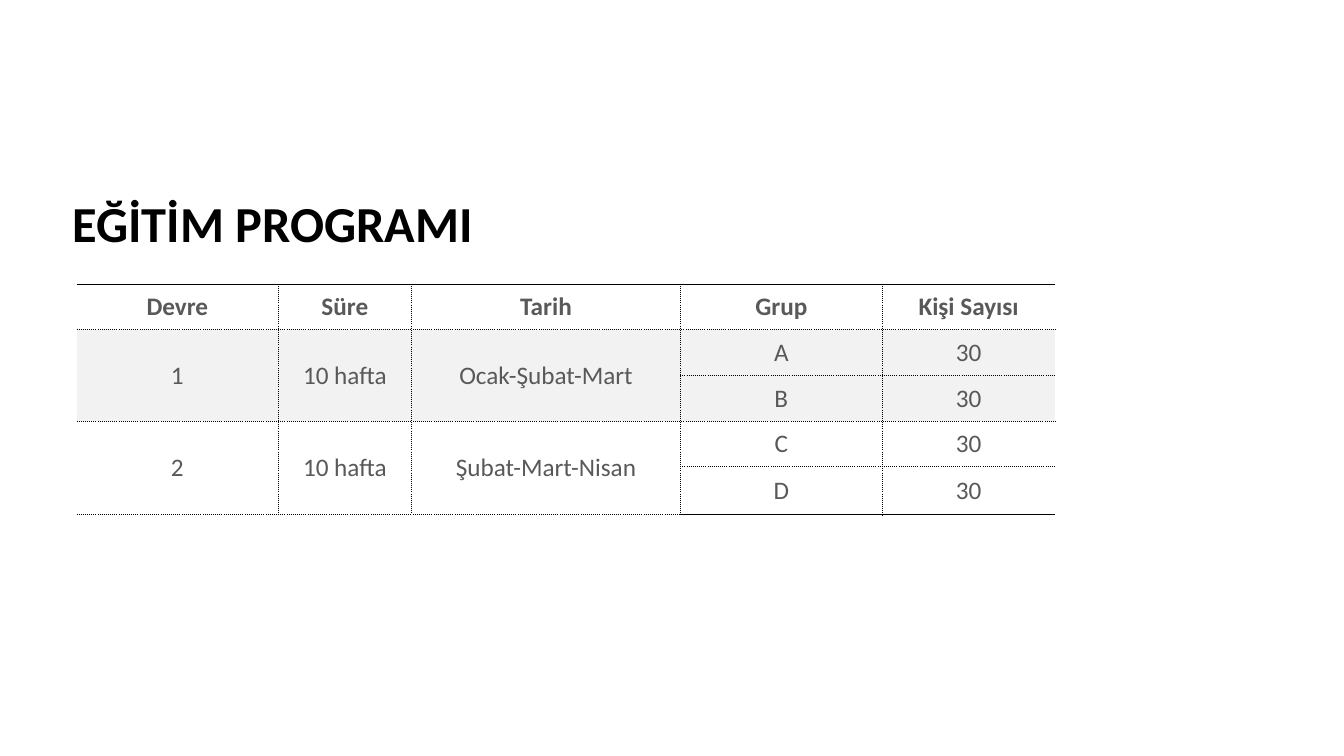
from dataclasses import dataclass

from lxml.etree import SubElement
from pptx import Presentation
from pptx.dml.color import RGBColor
from pptx.enum.text import MSO_ANCHOR, PP_ALIGN
from pptx.oxml.ns import qn
from pptx.slide import Slide
from pptx.table import Table, _Cell
from pptx.text.text import _Paragraph
from pptx.util import Cm, Pt


@dataclass(frozen=True)
class Theme:
    font: str = "Calibri"
    title_color: str = "000000"
    text_color: str = "595959"
    line_color: str = "000000"
    band_fill: str = "F2F2F2"
    title_size: int = 36
    table_size: int = 18


@dataclass(frozen=True)
class Border:
    width: float
    dash: str


@dataclass(frozen=True)
class Term:
    name: str
    duration: str
    months: str
    groups: tuple[tuple[str, str], ...]
    shaded: bool


THEME = Theme()
RULE = Border(1, "solid")
DOTTED = Border(0.5, "dot")

HEADERS = ("Devre", "Süre", "Tarih", "Grup", "Kişi Sayısı")
TERMS = (
    Term("1", "10 hafta", "Ocak-Şubat-Mart", (("A", "30"), ("B", "30")), True),
    Term("2", "10 hafta", "Şubat-Mart-Nisan", (("C", "30"), ("D", "30")), False),
)
COL_WIDTHS = (5.08, 3.36, 6.78, 5.08, 4.36)
ROW_HEIGHTS = (1.15, 1.15, 1.15, 1.15, 1.2)


def add_run(p: _Paragraph, text: str, size: int, color: str, bold: bool) -> None:
    r = p.add_run()
    r.text = text
    r.font.name = THEME.font
    r.font.size = Pt(size)
    r.font.bold = bold
    r.font.color.rgb = RGBColor.from_string(color)


def add_title(s: Slide, text: str) -> None:
    tf = s.shapes.add_textbox(Cm(1.58), Cm(4.65), Cm(31.8), Cm(2.1)).text_frame
    tf.word_wrap = True
    tf.vertical_anchor = MSO_ANCHOR.MIDDLE
    p = tf.paragraphs[0]
    p.line_spacing = 0.9
    add_run(p, text, THEME.title_size, THEME.title_color, True)


def set_border(cell: _Cell, side: str, border: Border | None) -> None:
    """Draw one side (L, R, T or B) of a cell; None leaves it without a line."""
    ln = SubElement(cell._tc.get_or_add_tcPr(), qn(f"a:ln{side}"))
    if border is None:
        SubElement(ln, qn("a:noFill"))
        return
    ln.set("w", str(Pt(border.width)))
    fill = SubElement(ln, qn("a:solidFill"))
    SubElement(fill, qn("a:srgbClr")).set("val", THEME.line_color)
    SubElement(ln, qn("a:prstDash")).set("val", border.dash)


def format_cell(table: Table, row: int, col: int, shaded: bool) -> None:
    cell = table.cell(row, col)
    last_row, last_col = len(ROW_HEIGHTS) - 1, len(COL_WIDTHS) - 1
    set_border(cell, "L", DOTTED if col > 0 else None)
    set_border(cell, "R", DOTTED if col < last_col else None)
    set_border(cell, "T", DOTTED if row > 0 else RULE)
    set_border(cell, "B", DOTTED if row < last_row else RULE)
    if shaded:
        cell.fill.solid()
        cell.fill.fore_color.rgb = RGBColor.from_string(THEME.band_fill)
    else:
        cell.fill.background()
    cell.vertical_anchor = MSO_ANCHOR.MIDDLE
    cell.margin_left = cell.margin_right = cell.margin_top = Cm(0.02)
    cell.margin_bottom = 0


def write_cell(table: Table, row: int, col: int, text: str, bold: bool = False) -> None:
    p = table.cell(row, col).text_frame.paragraphs[0]
    p.alignment = PP_ALIGN.CENTER
    add_run(p, text, THEME.table_size, THEME.text_color, bold)


def add_schedule(s: Slide) -> None:
    table = s.shapes.add_table(
        len(ROW_HEIGHTS), len(COL_WIDTHS), Cm(1.93), Cm(7.16),
        Cm(sum(COL_WIDTHS)), Cm(sum(ROW_HEIGHTS)),
    ).table
    table.first_row = table.horz_banding = False
    for column, width in zip(table.columns, COL_WIDTHS):
        column.width = Cm(width)
    for row, height in zip(table.rows, ROW_HEIGHTS):
        row.height = Cm(height)

    for col, header in enumerate(HEADERS):
        format_cell(table, 0, col, False)
        write_cell(table, 0, col, header, bold=True)

    top = 1
    for term in TERMS:
        bottom = top + len(term.groups) - 1
        for row, group in enumerate(term.groups, top):
            for col in range(len(HEADERS)):
                format_cell(table, row, col, term.shaded)
            for col, text in enumerate(group, 3):
                write_cell(table, row, col, text)
        for col, text in enumerate((term.name, term.duration, term.months)):
            table.cell(top, col).merge(table.cell(bottom, col))
            write_cell(table, top, col, text)
        top = bottom + 1


def main() -> None:
    prs = Presentation()
    prs.slide_width, prs.slide_height = Cm(33.87), Cm(19.05)
    s = prs.slides.add_slide(prs.slide_layouts[6])
    add_title(s, "EĞİTİM PROGRAMI")
    add_schedule(s)
    prs.save("out.pptx")


if __name__ == "__main__":
    main()
